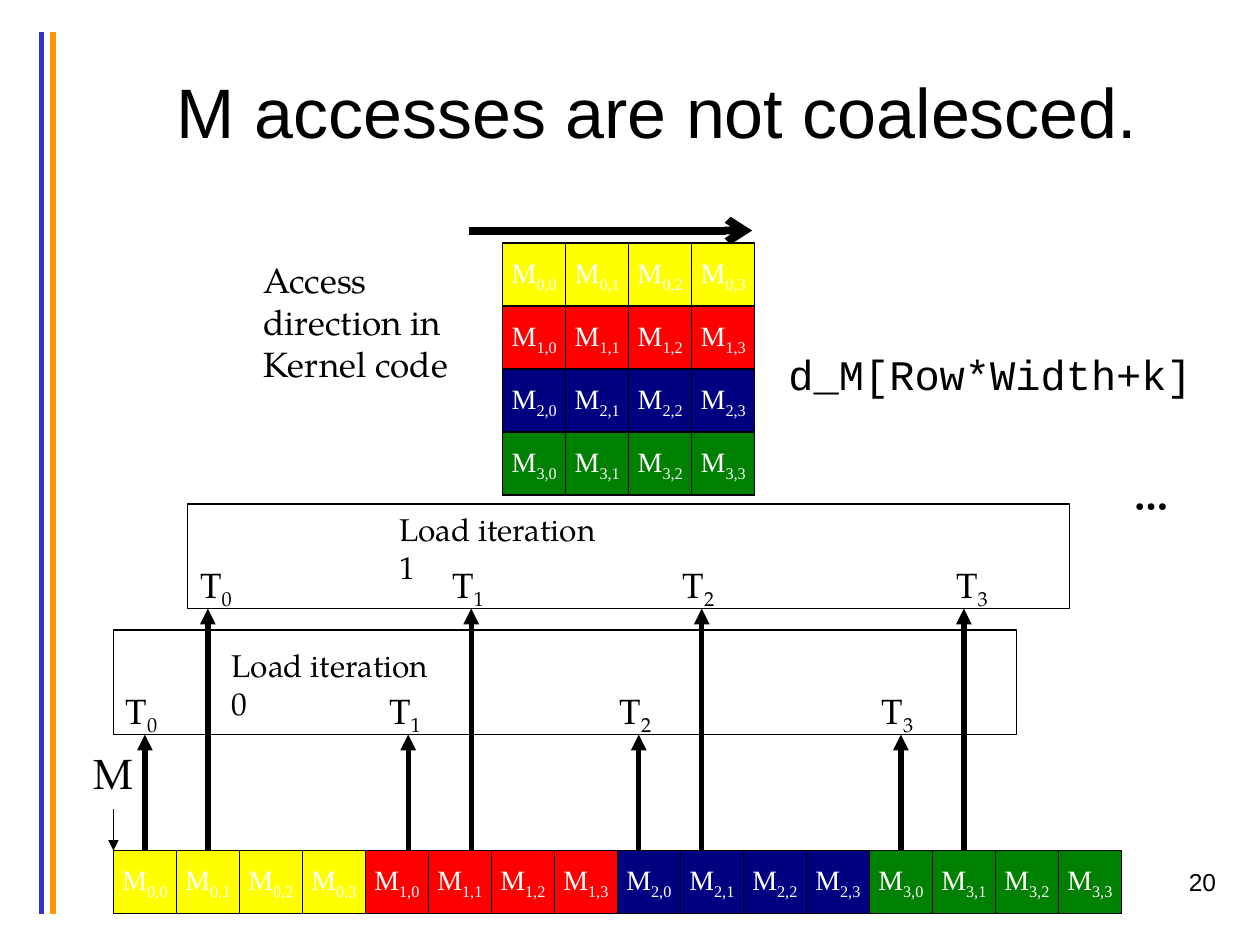
import dataclasses

import lxml.etree
import pptx
import pptx.dml.color
import pptx.enum.shapes
import pptx.enum.text
import pptx.oxml.ns
import pptx.util

Inches = pptx.util.Inches
Align = pptx.enum.text.PP_ALIGN
Anchor = pptx.enum.text.MSO_ANCHOR
Shape = pptx.enum.shapes.MSO_SHAPE
qn = pptx.oxml.ns.qn


@dataclasses.dataclass(frozen=True)
class Theme:
    ink: str = "000000"
    cell_ink: str = "FFFFFF"
    rules: tuple = ("3333CC", "FF9900")
    rows: tuple = ("FFFF00", "FF0000", "000080", "008000")
    sans: str = "Arial"
    body: str = "TeX Gyre Pagella"
    serif: str = "Times New Roman"
    mono: str = "Courier New"
    title_size: int = 40
    large_size: int = 24
    label_size: int = 20
    caption_size: int = 18
    cell_size: int = 16
    number_size: int = 14
    thin: float = 0.75
    thick: float = 3
    heavy: float = 4.5


def rgb(value):
    return pptx.dml.color.RGBColor.from_string(value)


class SlideBuilder:
    def __init__(self, slide, theme):
        self.slide = slide
        self.theme = theme

    def fill_text(self, frame, text, size, font=None, color=None, bold=False,
                  subscript="", align=Align.LEFT, **frame_format):
        """Fill a text frame, with an optional subscript after the text."""
        for name, value in frame_format.items():
            setattr(frame, name, value)
        paragraph = frame.paragraphs[0]
        paragraph.alignment = align
        font_format = {"name": font or self.theme.body,
                       "size": pptx.util.Pt(size), "bold": bold}
        for part, lowered in ((text, False), (subscript, True)):
            if not part:
                continue
            run = paragraph.add_run()
            run.text = part
            for name, value in font_format.items():
                setattr(run.font, name, value)
            run.font.color.rgb = rgb(color or self.theme.ink)
            if lowered:
                run._r.get_or_add_rPr().set("baseline", "-25000")

    def title(self, text, left, top, width, height):
        heading = self.slide.shapes.title
        place = {"left": left, "top": top, "width": width, "height": height}
        for name, value in place.items():
            setattr(heading, name, Inches(value))
        self.fill_text(heading.text_frame, text, self.theme.title_size,
                       self.theme.sans, align=Align.CENTER, word_wrap=True,
                       vertical_anchor=Anchor.MIDDLE)

    def label(self, text, left, top, width, height, size, wrap=False, **style):
        box = self.slide.shapes.add_textbox(
            Inches(left), Inches(top), Inches(width), Inches(height))
        self.fill_text(box.text_frame, text, size, word_wrap=wrap, **style)

    def box(self, left, top, width, height, fill=None):
        outline = self.slide.shapes.add_shape(
            Shape.RECTANGLE, Inches(left), Inches(top), Inches(width), Inches(height))
        outline.shadow.inherit = False
        if fill:
            outline.fill.solid()
            outline.fill.fore_color.rgb = rgb(fill)
        else:
            outline.fill.background()
        outline.line.color.rgb = rgb(self.theme.ink)
        outline.line.width = pptx.util.Pt(self.theme.thin)
        return outline

    def cell(self, row, column, left, top, side):
        square = self.box(left, top, side, side, self.theme.rows[row])
        self.fill_text(square.text_frame, "M", self.theme.cell_size,
                       self.theme.serif, self.theme.cell_ink,
                       subscript=f"{row},{column}", align=Align.CENTER,
                       word_wrap=False, vertical_anchor=Anchor.MIDDLE)

    def line(self, start, end, width, color=None, head=None):
        stroke = self.slide.shapes.add_connector(
            pptx.enum.shapes.MSO_CONNECTOR.STRAIGHT,
            *(Inches(value) for value in (*start, *end)))
        stroke.line.color.rgb = rgb(color or self.theme.ink)
        stroke.line.width = pptx.util.Pt(width)
        if head:
            lxml.etree.SubElement(stroke.line._ln, qn("a:tailEnd"), type=head)
        lxml.etree.SubElement(stroke._element.spPr, qn("a:effectLst"))


def main():
    deck = pptx.Presentation()
    deck.slide_width, deck.slide_height = Inches(10), Inches(7.5)
    theme = Theme()
    page = SlideBuilder(deck.slides.add_slide(deck.slide_layouts[5]), theme)

    # Side rules, title and page number
    for x, color in zip((0.33, 0.42), theme.rules):
        page.line((x, 0.25), (x, 7.25), theme.thick, color)
    page.title("M accesses are not coalesced. ", 0.75, 0.25, 9.08, 1.25)
    page.label("20", 7.67, 6.83, 2.08, 0.5, theme.number_size, wrap=True,
               font=theme.sans, align=Align.RIGHT)

    # Start of M in memory
    side, memory_left, memory_top = 0.5, 0.9, 6.75
    page.line((memory_left, 6.42), (memory_left, memory_top), theme.thin,
              head="triangle")
    page.label("M", 0.64, 5.88, 0.52, 0.5, theme.large_size)

    # Load iterations: frame, caption, thread labels and arrows from memory
    arrow_xs = (1.15, 3.24, 5.07, 7.15)
    iterations = (
        ((0.9, 5, 7.17), (1.74, 5.08), (0.9, 2.99, 4.82, 6.9)),
        ((1.49, 4, 7), (3.07, 4), (1.49, 3.49, 5.32, 7.49)),
    )
    frame_height = 0.83
    for iteration, (frame, caption, thread_lefts) in enumerate(iterations):
        left, top, width = frame
        page.label(f"Load iteration {iteration}", *caption, 1.81, 0.4,
                   theme.caption_size, wrap=True)
        for thread, (thread_left, x) in enumerate(zip(thread_lefts, arrow_xs)):
            page.label("T", thread_left, top + 0.42, 0.47, 0.44,
                       theme.label_size, subscript=str(thread))
            x += iteration * side
            page.line((x, memory_top), (x, top + frame_height), theme.thick,
                      head="triangle")
        page.box(left, top, width, frame_height)
    page.label("…", 8.9, 3.67, 0.53, 0.5, theme.large_size, bold=True)

    # Matrix as a grid, and the same cells laid out in memory
    matrix_left, matrix_top, order = 3.99, 1.93, len(theme.rows)
    for row in range(order):
        for column in range(order):
            page.cell(row, column, matrix_left + column * side,
                      matrix_top + row * side, side)
            page.cell(row, column, memory_left + (row * order + column) * side,
                      memory_top, side)

    # Access direction and index expression
    page.label("Access direction in Kernel code", 1.99, 2, 1.67, 1.43,
               theme.label_size, wrap=True)
    page.line((3.72, 1.83), (5.97, 1.83), theme.heavy, head="arrow")
    page.label("d_M[Row*Width+k]", 6.16, 2.72, 3.43, 0.5, theme.large_size,
               font=theme.mono)

    deck.save("out.pptx")


if __name__ == "__main__":
    main()
